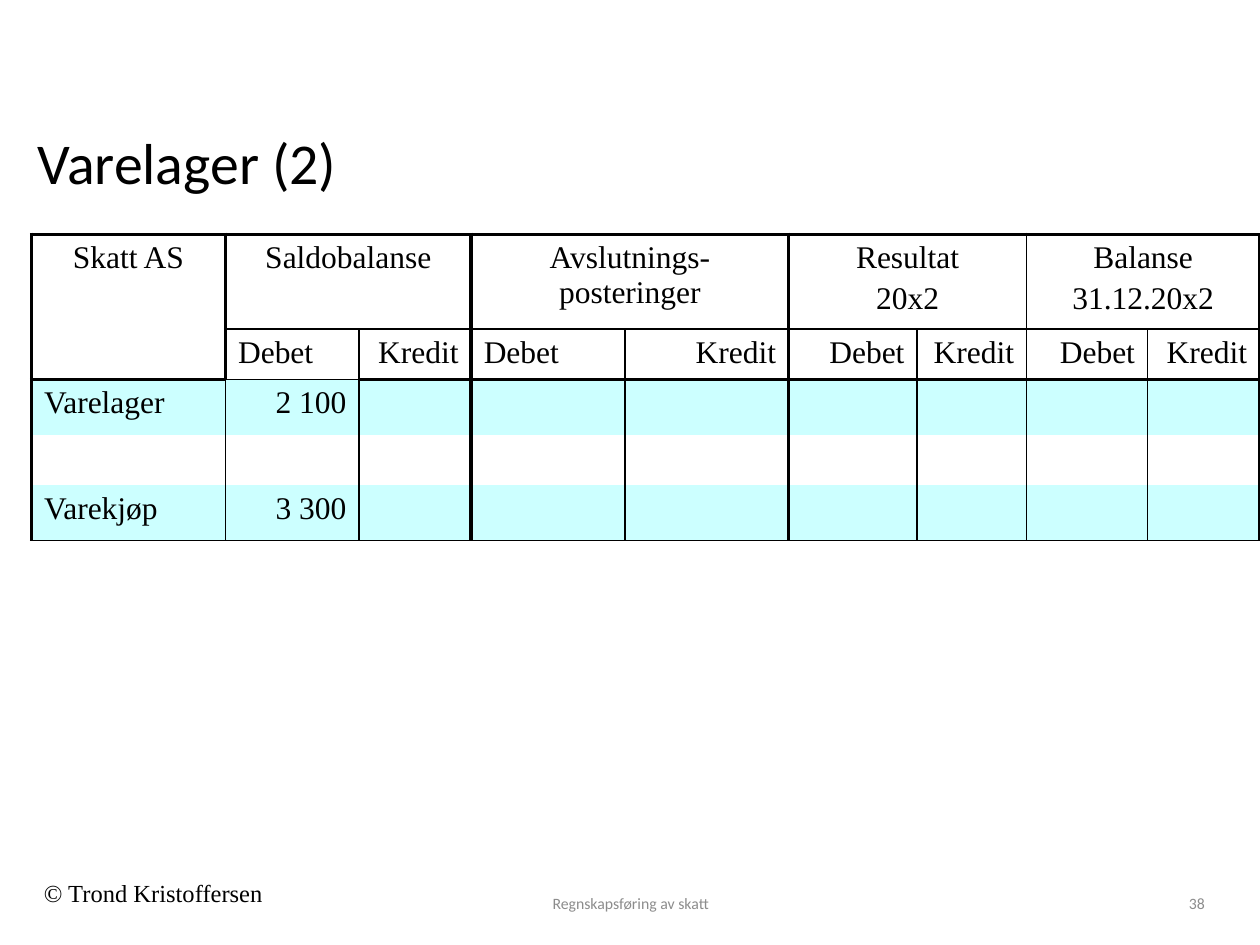
from typing import NamedTuple

from lxml import etree
from pptx import Presentation
from pptx.dml.color import RGBColor
from pptx.enum.text import MSO_ANCHOR, PP_ALIGN
from pptx.oxml.ns import qn
from pptx.util import Inches, Pt

LEFT, MID, RIGHT = PP_ALIGN.LEFT, PP_ALIGN.CENTER, PP_ALIGN.RIGHT
TOP, CENTER = MSO_ANCHOR.TOP, MSO_ANCHOR.MIDDLE
SANS, SERIF = "Calibri", "Times New Roman"
COLORS = {"ink": "000000", "gray": "8C8C8C", "band": "CCFFFF"}
WIDTHS = [1.54, 1.06, 0.89, 1.22, 1.3, 1.02, 0.87, 0.96, 0.89]
HEIGHTS = [0.7, 0.39, 0.44, 0.39, 0.44]
HEAD = 2
THICK, THIN, NONE = 2.25, 1, 0


class Style(NamedTuple):
    font: str
    size: float
    color: str
    align: PP_ALIGN = LEFT


class Label(NamedTuple):
    text: str
    box: tuple
    style: Style
    anchor: MSO_ANCHOR = CENTER
    pitch: float = 1.0


class Entry(NamedTuple):
    row: int
    col: int
    lines: list
    align: PP_ALIGN = LEFT
    rows: int = 1
    cols: int = 1


LABELS = [
    Label("© Trond Kristoffersen", (0.25, 6.92, 2.08, 0.33), Style(SERIF, 14, "ink"), TOP),
    Label("Varelager (2)", (0.2, 0.92, 9.53, 0.79), Style(SANS, 33, "ink"), pitch=0.9),
    Label("Regnskapsføring av skatt", (3.42, 6.92, 3.17, 0.5), Style(SANS, 9, "gray", MID)),
    Label("38", (7.58, 6.92, 2.08, 0.5), Style(SANS, 9, "gray", RIGHT)),
]
GROUPS = [["Saldobalanse"], ["Avslutnings-posteringer"], ["Resultat", "20x2"],
          ["Balanse", "31.12.20x2"]]
ENTRIES = [Entry(0, 0, ["Skatt AS"], MID, rows=2)]
for i, lines in enumerate(GROUPS):
    ENTRIES += [
        Entry(0, 2 * i + 1, lines, MID, cols=2),
        Entry(1, 2 * i + 1, ["Debet"], LEFT if i < 2 else RIGHT),
        Entry(1, 2 * i + 2, ["Kredit"], RIGHT),
    ]
for row, name, sum_ in [(2, "Varelager", "2 100"), (4, "Varekjøp", "3 300")]:
    ENTRIES += [Entry(row, 0, [name]), Entry(row, 1, [sum_], RIGHT)]


def write(para, text: str, style: Style) -> None:
    """Add one styled run to a paragraph."""
    para.alignment = style.align
    run = para.add_run()
    run.text = text
    run.font.name = style.font
    run.font.size = Pt(style.size)
    run.font.color.rgb = RGBColor.from_string(COLORS[style.color])


def add_label(slide, label: Label) -> None:
    """Place a text box on the slide."""
    frame = slide.shapes.add_textbox(*map(Inches, label.box)).text_frame
    frame.word_wrap = True
    frame.vertical_anchor = label.anchor
    para = frame.paragraphs[0]
    para.line_spacing = label.pitch
    write(para, label.text, label.style)


def upright(col: int, row: int) -> float:
    """Give the width of the vertical rule left of a column."""
    return THICK if col in (0, 3, 5, 9) or (col == 1 and row < HEAD) else THIN


def level(row: int, col: int) -> float:
    """Give the width of the horizontal rule above a row."""
    if row == HEAD and col == 1:
        return THIN
    return {0: THICK, 1: THIN, HEAD: THICK, len(HEIGHTS): THIN}.get(row, NONE)


def add_rule(props, side: str, width: float) -> None:
    """Draw one cell border."""
    line = etree.SubElement(props, qn(f"a:ln{side}"), w=str(Pt(width)))
    if width:
        fill = etree.SubElement(line, qn("a:solidFill"))
        etree.SubElement(fill, qn("a:srgbClr"), val=COLORS["ink"])
    else:
        etree.SubElement(line, qn("a:noFill"))


def dress(cell, row: int, col: int) -> None:
    """Set the borders and fill of a cell."""
    rows, cols = (cell.span_height, cell.span_width) if cell.is_merge_origin else (1, 1)
    props = cell._tc.get_or_add_tcPr()
    add_rule(props, "L", upright(col, row))
    add_rule(props, "R", upright(col + cols, row))
    add_rule(props, "T", level(row, col))
    add_rule(props, "B", level(row + rows, col))
    if row in (2, 4):
        cell.fill.solid()
        cell.fill.fore_color.rgb = RGBColor.from_string(COLORS["band"])
    else:
        cell.fill.background()


def fill_in(table, entry: Entry) -> None:
    """Merge the cells of an entry and write its lines."""
    cell = table.cell(entry.row, entry.col)
    if entry.rows * entry.cols > 1:
        cell.merge(table.cell(entry.row + entry.rows - 1, entry.col + entry.cols - 1))
    frame = cell.text_frame
    for i, text in enumerate(entry.lines):
        para = frame.add_paragraph() if i else frame.paragraphs[0]
        para.space_before = Pt(3.6)
        write(para, text, Style(SERIF, 18, "ink", entry.align))


def add_ledger(slide) -> None:
    """Build the ledger table."""
    size = len(HEIGHTS), len(WIDTHS)
    box = 0.25, 1.86, sum(WIDTHS), sum(HEIGHTS)
    table = slide.shapes.add_table(*size, *map(Inches, box)).table
    table.first_row = table.horz_banding = False
    for column, width in zip(table.columns, WIDTHS):
        column.width = Inches(width)
    for line, height in zip(table.rows, HEIGHTS):
        line.height = Inches(height)
    for entry in ENTRIES:
        fill_in(table, entry)
    for row, line in enumerate(table.rows):
        for col, cell in enumerate(line.cells):
            if not cell.is_spanned:
                dress(cell, row, col)


def main() -> None:
    """Build and save the slide."""
    deck = Presentation()
    deck.slide_width, deck.slide_height = Inches(10), Inches(7.5)
    slide = deck.slides.add_slide(deck.slide_layouts[6])
    for label in LABELS:
        add_label(slide, label)
    add_ledger(slide)
    deck.save("out.pptx")


if __name__ == "__main__":
    main()
